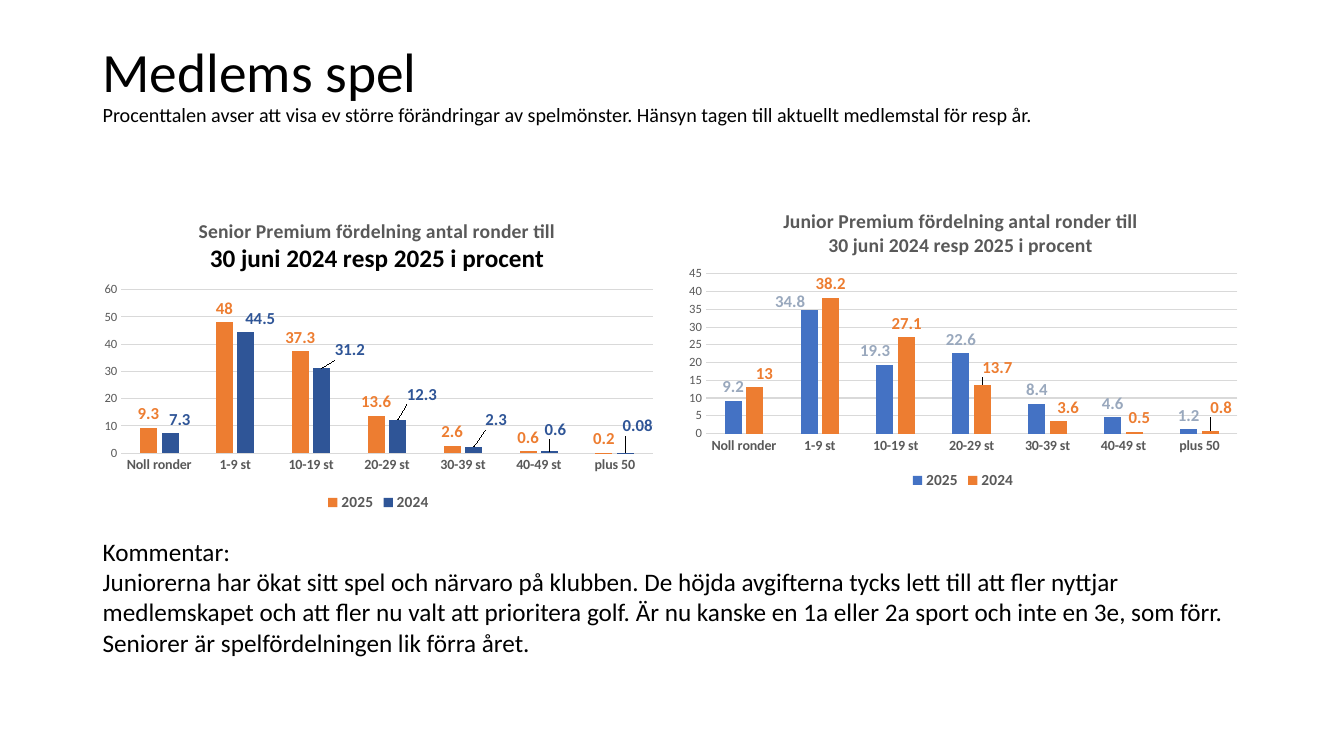
from lxml.etree import SubElement
from pptx import Presentation
from pptx.chart.data import CategoryChartData
from pptx.dml.color import RGBColor
from pptx.enum.chart import XL_CHART_TYPE, XL_LABEL_POSITION, XL_LEGEND_POSITION, XL_TICK_MARK
from pptx.enum.text import MSO_ANCHOR
from pptx.oxml.ns import qn
from pptx.util import Pt

BLACK, GREY, GRID = "000000", "595959", "D9D9D9"
ORANGE, NAVY, BLUE, STEEL = "ED7D31", "2F5597", "4472C4", "99A8BD"
ROUNDS = ["Noll ronder", "1-9 st", "10-19 st", "20-29 st", "30-39 st", "40-49 st", "plus 50"]


def color(value):
    return RGBColor.from_string(value)


def manual_layout(parent, settings):
    for old in parent.findall(qn("c:layout")):
        parent.remove(old)
    layout = SubElement(parent, qn("c:layout"))
    manual = SubElement(layout, qn("c:manualLayout"))
    for name, value in settings.items():
        SubElement(manual, qn(f"c:{name}")).set("val", str(value))
    return layout


class SlideBuilder:
    font_name = "Calibri"

    def __init__(self, slide):
        self.slide = slide

    def style(self, font, size, ink, bold=False):
        font.name = self.font_name
        font.size = Pt(size)
        font.bold = bold
        font.color.rgb = color(ink)

    def text(self, frame, paragraphs, anchor=MSO_ANCHOR.TOP, spacing=1.0):
        left, top, width, height = map(Pt, frame)
        box = self.slide.shapes.add_textbox(left, top, width, height)
        box.text_frame.word_wrap = True
        box.text_frame.vertical_anchor = anchor
        for index, (words, sizes) in enumerate(paragraphs):
            para = box.text_frame.paragraphs[0] if index == 0 else box.text_frame.add_paragraph()
            para.text = words
            para.line_spacing = spacing
            for span, size in zip(para.runs, sizes):
                self.style(span.font, size, BLACK)

    def title(self, chart, lines):
        frame = chart.chart_title.text_frame
        for index, (words, size, ink) in enumerate(lines):
            para = frame.paragraphs[0] if index == 0 else frame.add_paragraph()
            para.text = words
            self.style(para.runs[0].font, size, ink, True)
        title = chart.chart_title._element
        layout = manual_layout(title, {"xMode": "edge", "yMode": "edge", "x": 0.18, "y": 0.04})
        title.find(qn("c:tx")).addnext(layout)

    def axes(self, chart, top, step):
        category, value = chart.category_axis, chart.value_axis
        for axis, size, bold in ((category, 10, True), (value, 9, False)):
            axis.major_tick_mark = axis.minor_tick_mark = XL_TICK_MARK.NONE
            self.style(axis.tick_labels.font, size, GREY, bold)
        value.minimum_scale, value.maximum_scale, value.major_unit = 0, top, step
        value.format.line.fill.background()
        for line in (category.format.line, value.major_gridlines.format.line):
            line.color.rgb = color(GRID)
            line.width = Pt(0.75)

    def labels(self, series, ink, shifts):
        labels = series.data_labels
        labels.show_value = True
        labels.position = XL_LABEL_POSITION.OUTSIDE_END
        self.style(labels.font, 12, ink, True)
        for index, (x, y) in shifts.items():
            label = series.points[index].data_label
            self.style(label.font, 12, ink, True)
            label.position = XL_LABEL_POSITION.OUTSIDE_END
            element = next(item for item in labels._element.findall(qn("c:dLbl"))
                           if item.find(qn("c:idx")).get("val") == str(index))
            layout = manual_layout(element, {"x": x / 100, "y": y / 100})
            element.find(qn("c:idx")).addnext(layout)

    def columns(self, frame, title, scale, plot_area, series_list):
        data = CategoryChartData()
        data.categories = ROUNDS
        for name, values, *_ in series_list:
            data.add_series(name, values)
        left, top, width, height = map(Pt, frame)
        chart = self.slide.shapes.add_chart(
            XL_CHART_TYPE.COLUMN_CLUSTERED, left, top, width, height, data).chart
        self.style(chart.font, 10, BLACK)
        self.title(chart, title)
        self.axes(chart, *scale)
        chart.has_legend = True
        chart.legend.position = XL_LEGEND_POSITION.BOTTOM
        chart.legend.include_in_layout = False
        self.style(chart.legend.font, 11, GREY, True)
        plot = chart.plots[0]
        plot.gap_width, plot.overlap, plot.vary_by_categories = 219, -27, False
        for series, (_, _, fill, ink, shifts) in zip(plot.series, series_list):
            series.format.fill.solid()
            series.format.fill.fore_color.rgb = color(fill)
            self.labels(series, ink, shifts)
        area = chart._chartSpace.chart.plotArea
        x, y, w, h = plot_area
        area.insert(0, manual_layout(area, {
            "layoutTarget": "inner", "xMode": "edge", "yMode": "edge",
            "x": x, "y": y, "w": w, "h": h}))


def main():
    deck = Presentation()
    deck.slide_width, deck.slide_height = Pt(960), Pt(540)
    page = SlideBuilder(deck.slides.add_slide(deck.slide_layouts[6]))

    page.text((66.24, 28.8, 828, 64.8), [
        ("Medlems spel\vProcenttalen avser att visa ev större förändringar av spelmönster. "
         "Hänsyn tagen till aktuellt medlemstal för resp år.", (39.6, 14.4)),
    ], MSO_ANCHOR.MIDDLE, 0.9)

    page.columns(
        (66.24, 144, 408.24, 224.64),
        [("Senior Premium fördelning antal ronder till", 14, GREY),
         ("30 juni 2024 resp 2025 i procent", 18, BLACK)],
        (60, 10), (0.05, 0.28, 0.93, 0.52),
        [("2025", (9.3, 48, 37.3, 13.6, 2.6, 0.6, 0.2), ORANGE, ORANGE, {}),
         ("2024", (7.3, 44.5, 31.2, 12.3, 2.3, 0.6, 0.08), NAVY, NAVY,
          {0: (1.7, 0.3), 1: (2.5, 0.3), 2: (4.9, -1.3), 3: (4.2, -3.5),
           4: (3.9, -4.1), 5: (1, -2.5), 6: (2.1, -4.1)})])

    page.columns(
        (483.84, 137.52, 408.24, 215.28),
        [("Junior Premium fördelning antal ronder till", 14, GREY),
         ("30 juni 2024 resp 2025 i procent", 14, GREY)],
        (45, 5), (0.05, 0.27, 0.93, 0.53),
        [("2025", (9.2, 34.8, 19.3, 22.6, 8.4, 4.6, 1.2), BLUE, STEEL,
          {1: (-3.3, 1.7), 2: (-1.7, 0)}),
         ("2024", (13, 38.2, 27.1, 13.7, 3.6, 0.5, 0.8), ORANGE, ORANGE,
          {0: (1.7, 0), 3: (2.6, -1), 4: (1.7, 0.3), 5: (0.9, 0), 6: (1.9, -3)})])

    page.text((66.24, 379.44, 835.92, 94.32), [
        ("Kommentar:\vJuniorerna har ökat sitt spel och närvaro på klubben. De höjda avgifterna "
         "tycks lett till att fler nyttjar medlemskapet och att fler nu valt att prioritera golf. "
         "Är nu kanske en 1a eller 2a sport och inte en 3e, som förr.", (18, 18)),
        ("Seniorer är spelfördelningen lik förra året.", (18,)),
    ])

    deck.save("out.pptx")


if __name__ == "__main__":
    main()
